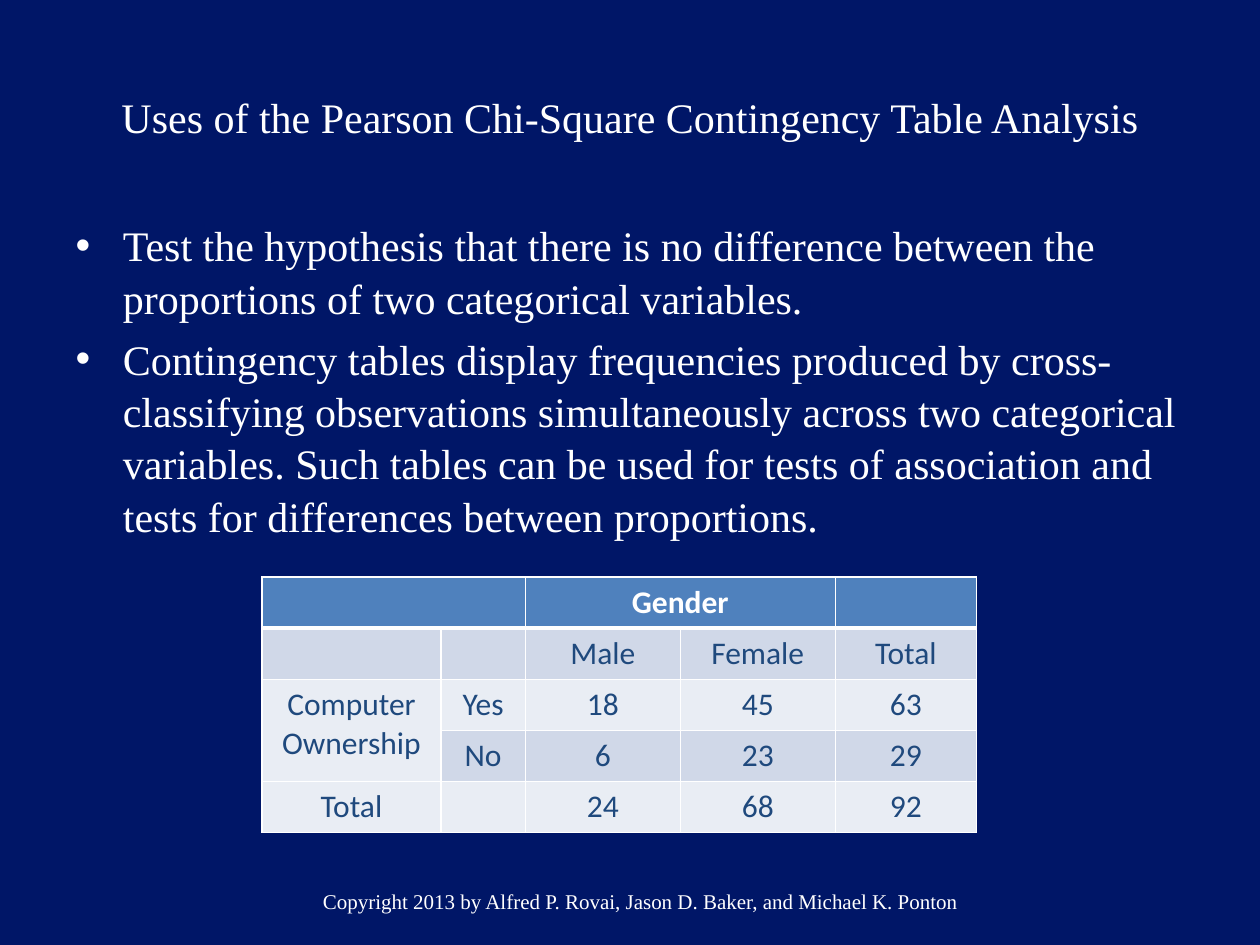
from pptx import Presentation
from pptx.dml.color import RGBColor
from pptx.enum.text import MSO_ANCHOR as Anchor, MSO_AUTO_SIZE as AutoSize, PP_ALIGN as Align
from pptx.oxml import parse_xml
from pptx.oxml.ns import nsdecls
from pptx.util import Inches, Pt

TITLE = "Uses of the Pearson Chi-Square Contingency Table Analysis"
USES = [
    "Test the hypothesis that there is no difference between the proportions of two categorical variables.",
    "Contingency tables display frequencies produced by cross-classifying observations simultaneously "
    "across two categorical variables. Such tables can be used for tests of association and tests for "
    "differences between proportions.",
]
COPYRIGHT = "Copyright 2013 by Alfred P. Rovai, Jason D. Baker, and Michael K. Ponton"
FREQUENCIES = [
    ["", "", "Gender", "", ""],
    ["", "", "Male", "Female", "Total"],
    ["Computer\nOwnership", "Yes", "18", "45", "63"],
    ["", "No", "6", "23", "29"],
    ["Total", "", "24", "68", "92"],
]
MERGES = [((0, 0), (0, 1)), ((0, 2), (0, 3)), ((2, 0), (3, 0))]
COLUMN_WIDTHS = [1.42, 0.67, 1.23, 1.23, 1.12]
ROW_HEIGHT = 0.405
NAVY, WHITE, INK = "001667", "FFFFFF", "1F497D"
HEADER, BANDS = "4F81BD", ("E9EDF4", "D0D8E8")
SERIF, SANS = "Times New Roman", "Calibri"


def color(hex_code):
    return RGBColor.from_string(hex_code)


def place(box, left, top, width, height):
    box.left, box.top, box.width, box.height = map(Inches, (left, top, width, height))


def style(frame, size, face, ink, align=None, bold=None):
    for paragraph in frame.paragraphs:
        paragraph.alignment = align
        font = paragraph.font
        font.size, font.name, font.bold = Pt(size), face, bold
        font.color.rgb = color(ink)


def set_borders(cell, row):
    thick = {0: "B", 1: "T"}.get(row)
    for index, side in enumerate("LRTB"):
        width = Pt(3 if side == thick else 1)
        cell._tc.get_or_add_tcPr().insert(index, parse_xml(
            f'<a:ln{side} {nsdecls("a")} w="{width}"><a:solidFill>'
            f'<a:srgbClr val="{WHITE}"/></a:solidFill></a:ln{side}>'))


def add_frequencies(slide):
    rows, columns = len(FREQUENCIES), len(COLUMN_WIDTHS)
    table = slide.shapes.add_table(
        rows, columns, Inches(2.08), Inches(4.58),
        Inches(sum(COLUMN_WIDTHS)), Inches(rows * ROW_HEIGHT)).table
    for column, width in zip(table.columns, COLUMN_WIDTHS):
        column.width = Inches(width)
    for first, last in MERGES:
        table.cell(*first).merge(table.cell(*last))
    for r, texts in enumerate(FREQUENCIES):
        for c, text in enumerate(texts):
            cell = table.cell(r, c)
            cell.text = text
            cell.fill.solid()
            cell.fill.fore_color.rgb = color(BANDS[r % 2] if r else HEADER)
            set_borders(cell, r)
            style(cell.text_frame, 18, SANS, INK if r else WHITE, Align.CENTER, r == 0)


def main():
    deck = Presentation()
    deck.slide_width, deck.slide_height = Inches(10), Inches(7.5)
    slide = deck.slides.add_slide(deck.slide_layouts[1])
    slide.background.fill.solid()
    slide.background.fill.fore_color.rgb = color(NAVY)

    title, uses = slide.placeholders
    place(title, 0.5, 0.3, 9, 1.25)
    title.text_frame.text = TITLE
    title.text_frame.vertical_anchor = Anchor.MIDDLE
    style(title.text_frame, 24, SERIF, WHITE, Align.CENTER)

    place(uses, 0.5, 1.25, 9, 4.53)
    uses.text_frame.text = "\n".join(USES)
    uses.text_frame.auto_size = AutoSize.NONE
    uses.text_frame.margin_top = Inches(0.48)
    style(uses.text_frame, 24, SERIF, WHITE)
    for paragraph in uses.text_frame.paragraphs:
        paragraph.line_spacing = 1.04

    add_frequencies(slide)

    notice = slide.shapes.add_textbox(0, 0, 0, 0)
    place(notice, 1.75, 6.95, 6.67, 0.4)
    notice.text_frame.word_wrap = True
    notice.text_frame.vertical_anchor = Anchor.MIDDLE
    notice.text_frame.text = COPYRIGHT
    style(notice.text_frame, 12, SERIF, WHITE, Align.CENTER)

    deck.save("out.pptx")


if __name__ == "__main__":
    main()
